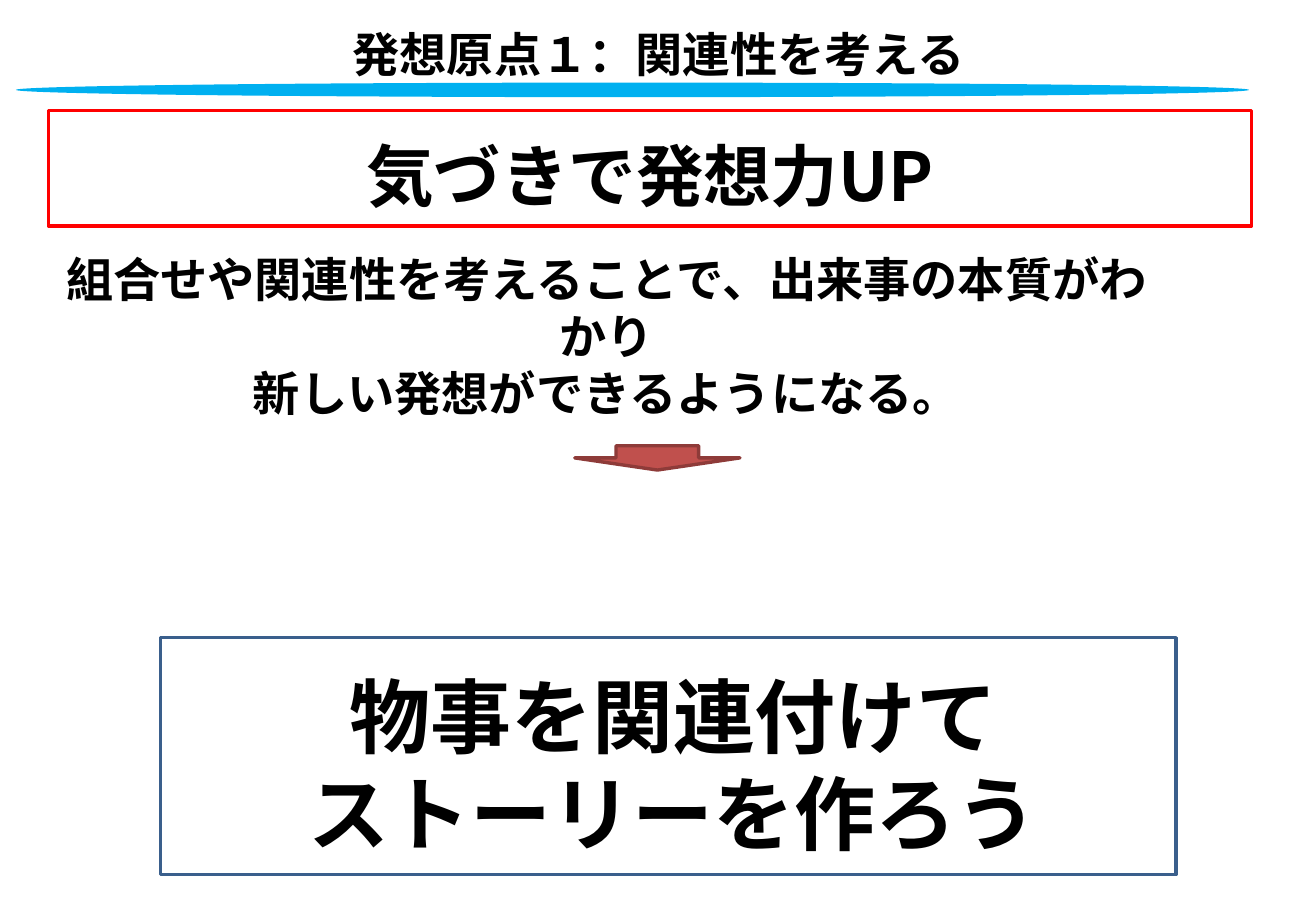
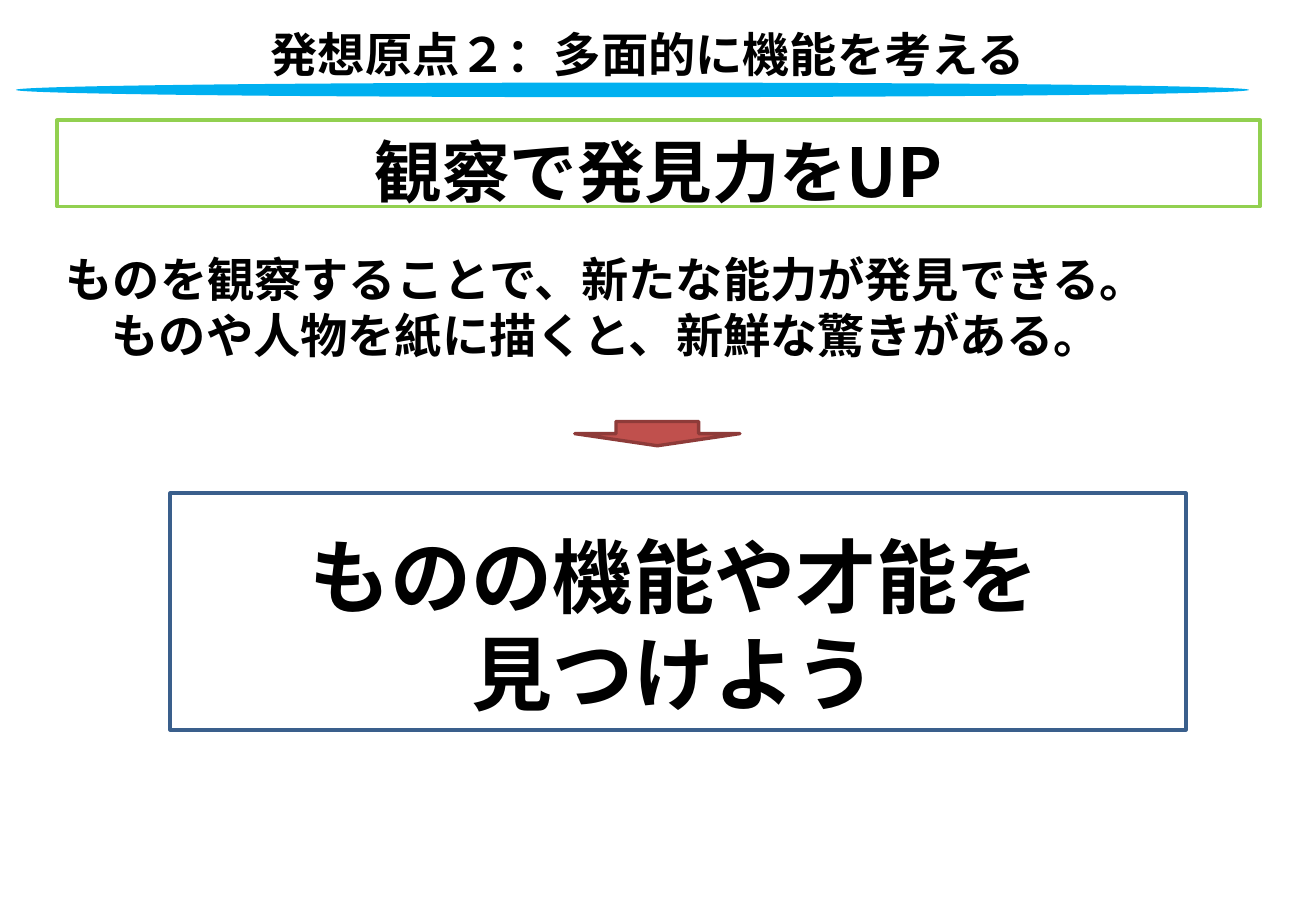
"""Build two slides on the starting points of ideas."""
from lxml.etree import SubElement
from pptx import Presentation
from pptx.dml.color import RGBColor
from pptx.enum.shapes import MSO_SHAPE
from pptx.enum.text import MSO_ANCHOR, PP_ALIGN
from pptx.oxml.ns import qn
from pptx.util import Inches, Pt

BLACK = RGBColor(0x00, 0x00, 0x00)
WHITE = RGBColor(0xFF, 0xFF, 0xFF)
SKY = RGBColor(0x00, 0xB0, 0xF0)
RED = RGBColor(0xFF, 0x00, 0x00)
GREEN = RGBColor(0x92, 0xD0, 0x50)
NAVY = RGBColor(0x3A, 0x5F, 0x8C)
BRICK = RGBColor(0xC0, 0x50, 0x4D)
MAROON = RGBColor(0x8E, 0x3B, 0x39)
FONT = "Noto Sans CJK JP"
PITCH = 1.2
DROP = 0.2


def write(shape, *lines, size=28, inset=0.04, color=BLACK):
    frame = shape.text_frame
    frame.word_wrap = True
    frame.vertical_anchor = MSO_ANCHOR.MIDDLE
    frame.margin_left = frame.margin_right = frame.margin_bottom = Inches(inset)
    frame.margin_top = Inches(inset) + Pt(size * DROP)
    for i, line in enumerate(lines):
        para = frame.add_paragraph() if i else frame.paragraphs[0]
        para.alignment = PP_ALIGN.CENTER
        para.line_spacing = Pt(size * PITCH)
        run = para.add_run()
        run.text = line
        font = run.font
        font.name, font.size, font.bold = FONT, Pt(size), True
        font.color.rgb = color
        SubElement(run._r.get_or_add_rPr(), qn("a:ea")).set("typeface", FONT)


class Deck:
    def __init__(self):
        self.prs = Presentation()
        self.prs.slide_width = Inches(10.83)
        self.prs.slide_height = Inches(7.5)
        self.slide = None

    def shape(self, kind, at, fill=None, line=None, width=2):
        item = self.slide.shapes.add_shape(kind, *map(Inches, at))
        item.shadow.inherit = False
        if fill is None:
            item.fill.background()
        else:
            item.fill.solid()
            item.fill.fore_color.rgb = fill
        if line is None:
            item.line.fill.background()
        else:
            item.line.color.rgb = line
            item.line.width = Pt(width)
        return item

    def text(self, at, *lines, **style):
        write(self.slide.shapes.add_textbox(*map(Inches, at)), *lines, **style)

    def page(self, title, left):
        self.slide = self.prs.slides.add_slide(self.prs.slide_layouts[6])
        self.shape(MSO_SHAPE.OVAL, (0.13, 0.68, 10.15, 0.12), SKY)
        self.text((left, 0.13, 9.9, 0.54), title)

    def banner(self, words, left, top, height, color):
        item = self.shape(MSO_SHAPE.RECTANGLE, (left, top, 9.9, height), WHITE, color, 2.25)
        write(item, words, size=40)

    def body(self, top, *lines):
        self.text((0.47, top, 9.04, 1.09), *lines)

    def arrow(self, top):
        self.shape(MSO_SHAPE.DOWN_ARROW, (4.73, top, 1.36, 0.2), BRICK, MAROON)

    def goal(self, text_at, frame_at, *lines):
        self.text((*text_at, 9.68, 1.72), *lines, size=48, inset=0.05)
        self.shape(MSO_SHAPE.RECTANGLE, (*frame_at, 8.36, 1.95), line=NAVY)


def main():
    deck = Deck()
    deck.page("発想原点１：関連性を考える", 0.47)
    deck.banner("気づきで発想力UP", 0.4, 0.91, 0.95, RED)
    deck.body(2.18, "組合せや関連性を考えることで、出来事の本質がわかり",
              "新しい発想ができるようになる。")
    deck.arrow(3.67)
    deck.goal((0.7, 5.36), (1.32, 5.25), "物事を関連付けて", "ストーリーを作ろう")

    deck.page("発想原点２：多面的に機能を考える", 0.38)
    deck.banner("観察で発見力をUP", 0.47, 0.99, 0.71, GREEN)
    deck.body(1.94, "ものを観察することで、新たな能力が発見できる。",
              "ものや人物を紙に描くと、新鮮な驚きがある。")
    deck.arrow(3.47)
    deck.goal((0.71, 4.21), (1.4, 4.06), "ものの機能や才能を", "見つけよう")
    deck.prs.save("out.pptx")


if __name__ == "__main__":
    main()
